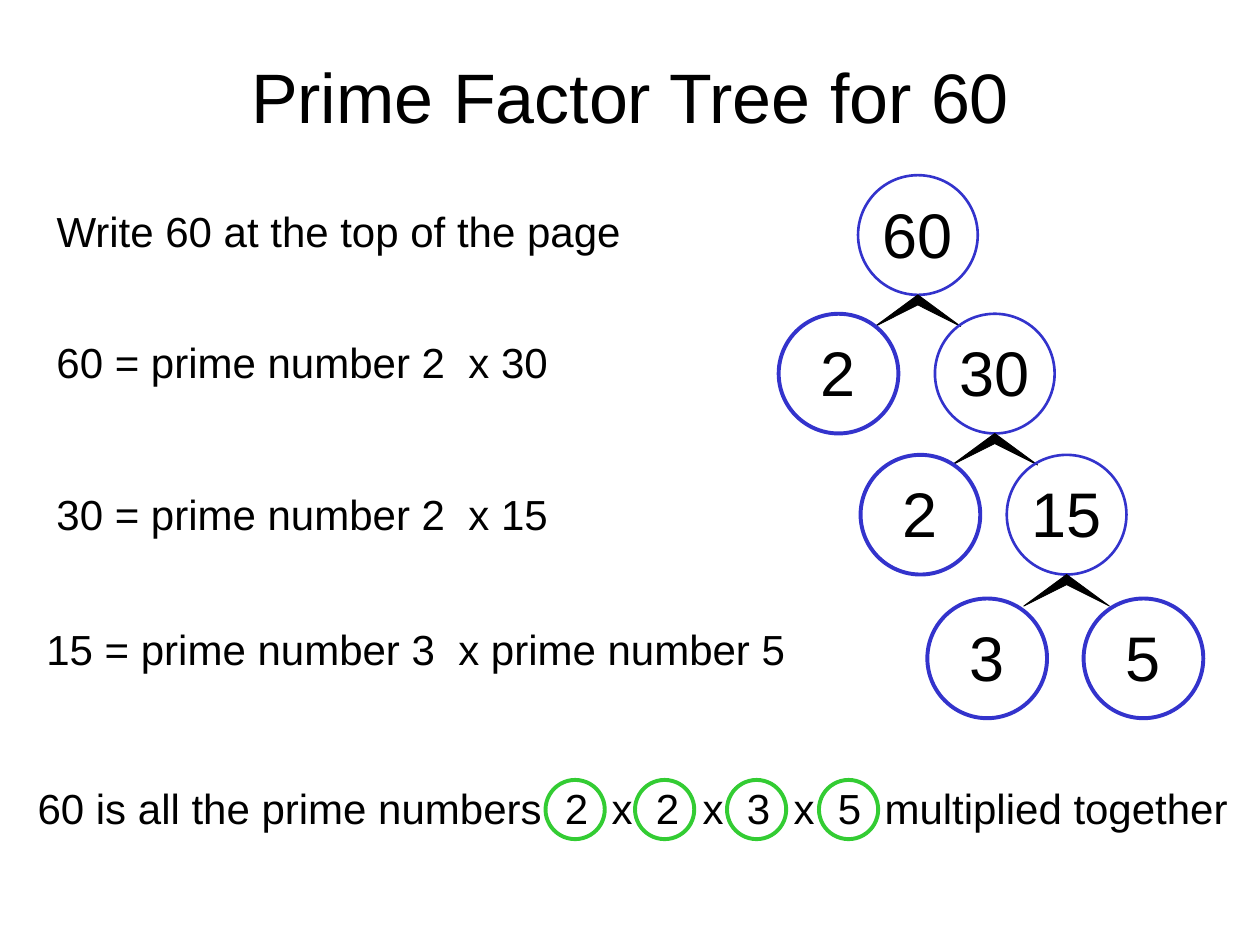
from dataclasses import dataclass

import pptx
import pptx.dml.color
import pptx.enum.shapes
import pptx.enum.text
import pptx.util
from pptx.util import Inches

Align = pptx.enum.text.PP_ALIGN
Anchor = pptx.enum.text.MSO_ANCHOR


@dataclass(frozen=True)
class Theme:
    font: str = "Arial"
    ink: str = "000000"
    tree: str = "3333CC"
    answer: str = "33CC33"
    title_size: float = 40
    number_size: float = 36
    body_size: float = 24
    thin: float = 1.5
    thick: float = 2.25
    hairline: float = 0.5


THEME = Theme()
NODE = 0.95
ANSWER_RING = 0.47

# left, top, width, text
STEPS = [
    (0.35, 1.58, 4.68, "Write 60 at the top of the page"),
    (0.35, 2.62, 4.1, "60 = prime number 2  x 30"),
    (0.35, 3.83, 4.1, "30 = prime number 2  x 15"),
    (0.27, 4.9, 6.07, "15 = prime number 3  x prime number 5"),
    (0.2, 6.16, 9.65,
     "60 is all the prime numbers  2  x  2  x  3  x  5  multiplied together"),
]

# left, top, number, is prime
NODES = [
    (6.81, 1.39, "60", False),
    (6.18, 2.49, "2", True),
    (7.42, 2.49, "30", False),
    (6.83, 3.61, "2", True),
    (7.99, 3.61, "15", False),
    (7.36, 4.75, "3", True),
    (8.6, 4.75, "5", True),
]

ANSWER_LEFTS = [4.33, 5.04, 5.77, 6.5]
ANSWER_TOP = 6.19


def color(value):
    return pptx.dml.color.RGBColor.from_string(value)


def add_text(page, left, top, width, height, text, size,
             align=Align.LEFT, anchor=Anchor.TOP, wrap=False):
    box = page.shapes.add_textbox(
        Inches(left), Inches(top), Inches(width), Inches(height))
    frame = box.text_frame
    frame.word_wrap = wrap
    frame.vertical_anchor = anchor
    para = frame.paragraphs[0]
    para.text = text
    para.alignment = align
    para.font.name = THEME.font
    para.font.size = pptx.util.Pt(size)
    para.font.color.rgb = color(THEME.ink)


def add_ring(page, left, top, size, line_color, line_width):
    ring = page.shapes.add_shape(
        pptx.enum.shapes.MSO_SHAPE.OVAL,
        Inches(left), Inches(top), Inches(size), Inches(size))
    ring.shadow.inherit = False
    ring.fill.background()
    ring.line.color.rgb = color(line_color)
    ring.line.width = pptx.util.Pt(line_width)


def add_node(page, left, top, number, is_prime):
    """Draw a number with a ring around it; primes get the thicker ring."""
    width = 0.76 if len(number) > 1 else 0.48
    add_text(page, left + (NODE - width) / 2, top + 0.11, width, 0.7,
             number, THEME.number_size)
    add_ring(page, left, top, NODE, THEME.tree,
             THEME.thick if is_prime else THEME.thin)


def add_branches(page, left, top):
    """Draw the two tapered branches below the node at left, top."""
    center, apex = left + NODE / 2, top + NODE
    reach, drop, thickness = 0.34, 0.25, 0.08
    outline = [
        (center - reach, apex + drop),
        (center, apex + thickness),
        (center + reach, apex + drop),
    ]
    builder = page.shapes.build_freeform(Inches(center), Inches(apex))
    builder.add_line_segments([(Inches(x), Inches(y)) for x, y in outline])
    branches = builder.convert_to_shape()
    branches.shadow.inherit = False
    branches.fill.solid()
    branches.fill.fore_color.rgb = color(THEME.ink)
    branches.line.color.rgb = color(THEME.ink)
    branches.line.width = pptx.util.Pt(THEME.hairline)


def main():
    deck = pptx.Presentation()
    deck.slide_width, deck.slide_height = Inches(10), Inches(7.5)
    page = deck.slides.add_slide(deck.slide_layouts[6])

    add_text(page, 0.5, 0.13, 9, 1.25, "Prime Factor Tree for 60",
             THEME.title_size, Align.CENTER, Anchor.MIDDLE, wrap=True)
    for left, top, width, text in STEPS:
        add_text(page, left, top, width, 0.5, text, THEME.body_size)
    for left, top, number, is_prime in NODES:
        add_node(page, left, top, number, is_prime)
        if not is_prime:
            add_branches(page, left, top)
    for left in ANSWER_LEFTS:
        add_ring(page, left, ANSWER_TOP, ANSWER_RING,
                 THEME.answer, THEME.thick)

    deck.save("out.pptx")


if __name__ == "__main__":
    main()
